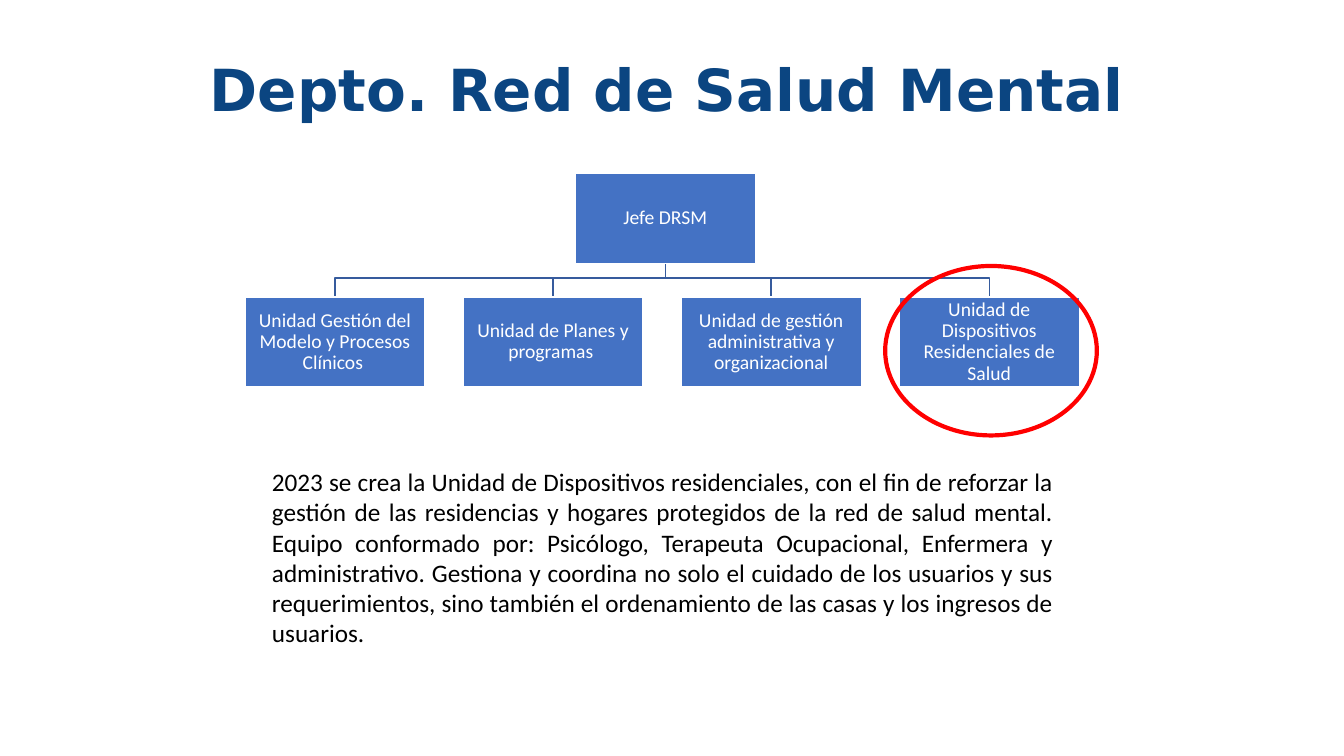
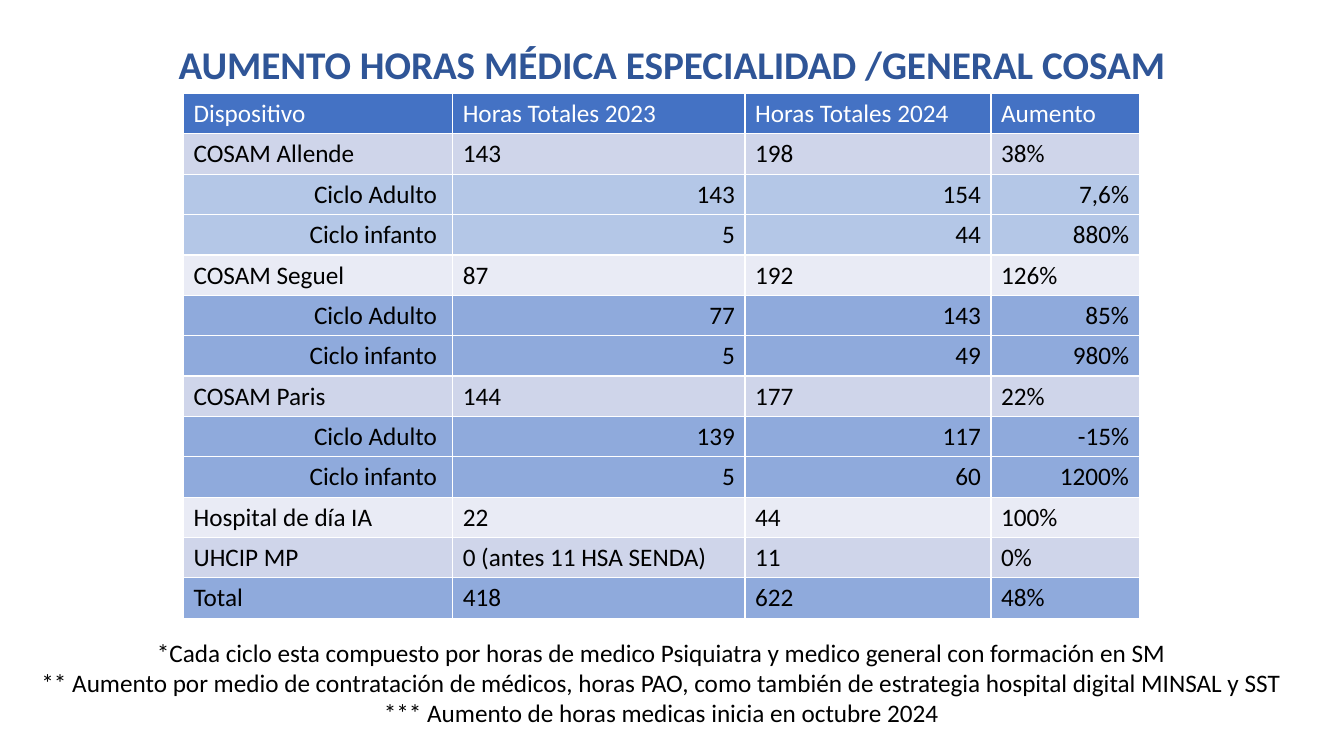
from collections import namedtuple
from dataclasses import dataclass

from lxml import etree
from pptx import Presentation
from pptx.dml.color import RGBColor
from pptx.enum import shapes, text
from pptx.oxml import ns
from pptx.util import Pt

Box = namedtuple("Box", "left top width height")
ALIGN = text.PP_ALIGN
MIDDLE = text.MSO_ANCHOR.MIDDLE


@dataclass(frozen=True)
class Theme:
    """Colours and text styles of the presentation."""

    white: str = "FFFFFF"
    black: str = "000000"
    navy: str = "0B4581"
    heading: str = "2F5597"
    accent: str = "4472C4"
    connector: str = "365B9D"
    alert: str = "FF0000"
    band_dark: str = "CFD5EA"
    band_light: str = "E9EBF5"
    cycle_light: str = "B4C7E7"
    cycle_dark: str = "8FAADC"

    def font(self, role):
        """Return the font values and the colour of a text role."""
        name, size, bold, color = {
            "title": ("DejaVu Sans", 41.4, True, self.navy),
            "heading": ("Calibri", 28, True, self.heading),
            "body": ("Calibri", 18, False, self.black),
            "header": ("Calibri", 18, False, self.white),
            "unit": ("Calibri", 14, False, self.white),
        }[role]
        return {"name": name, "size": Pt(size), "bold": bold}, color


THEME = Theme()

UNITS = [
    "Unidad Gestión del Modelo y Procesos Clínicos ",
    "Unidad de Planes y programas ",
    "Unidad de gestión administrativa y organizacional",
    "Unidad de Dispositivos Residenciales de Salud",
]
SUMMARY = (
    "2023 se crea la Unidad de Dispositivos residenciales, con el fin de reforzar la gestión "
    "de las residencias y hogares protegidos de la red de salud mental. Equipo conformado por: "
    "Psicólogo, Terapeuta Ocupacional, Enfermera y administrativo. Gestiona y coordina no solo "
    "el cuidado de los usuarios y sus requerimientos, sino también el ordenamiento de las casas "
    "y los ingresos de usuarios."
)
COLUMN_WIDTHS = [192.3, 208.8, 175.7, 105.8]
HOURS = [
    (THEME.accent, ["Dispositivo", "Horas Totales 2023", "Horas Totales 2024", "Aumento"]),
    (THEME.band_dark, ["COSAM Allende", "143", "198", "38%"]),
    (THEME.cycle_light, ["Ciclo Adulto ", "143", "154", "7,6%"]),
    (THEME.cycle_light, ["Ciclo infanto ", "5", "44", "880%"]),
    (THEME.band_light, ["COSAM Seguel", "87", "192", "126%"]),
    (THEME.cycle_dark, ["Ciclo Adulto ", "77", "143", "85%"]),
    (THEME.cycle_dark, ["Ciclo infanto ", "5", "49", "980%"]),
    (THEME.band_dark, ["COSAM Paris", "144", "177", "22%"]),
    (THEME.cycle_dark, ["Ciclo Adulto ", "139", "117", "-15%"]),
    (THEME.cycle_dark, ["Ciclo infanto ", "5", "60", "1200%"]),
    (THEME.band_light, ["Hospital de día IA", "22", "44", "100%"]),
    (THEME.band_dark, ["UHCIP MP", "0 (antes 11 HSA SENDA)", "11", "0%"]),
    (THEME.cycle_dark, ["Total", "418", "622", "48%"]),
]
NOTES = [
    "*Cada ciclo esta compuesto por horas de medico Psiquiatra y medico general con formación en SM",
    "** Aumento por medio de contratación de médicos, horas PAO, como también de estrategia "
    "hospital digital MINSAL y SST",
    "*** Aumento de horas medicas inicia en octubre 2024",
]


def apply(target, values):
    """Set every attribute named in a dict of format values."""
    for name, value in values.items():
        setattr(target, name, value)


def lengths(values):
    """Convert numbers in points to lengths."""
    return [Pt(round(value, 2)) for value in values]


def write(frame, lines, role, **layout):
    """Write lines of text in one role, one paragraph each."""
    font, color = THEME.font(role)
    for index, line in enumerate(lines):
        paragraph = frame.add_paragraph() if index else frame.paragraphs[0]
        apply(paragraph, layout)
        run = paragraph.add_run()
        run.text = line
        apply(run.font, font)
        run.font.color.rgb = RGBColor.from_string(color)


def add_text(slide, box, lines, role, anchor=text.MSO_ANCHOR.TOP, **layout):
    """Add a wrapping text box."""
    frame = slide.shapes.add_textbox(*lengths(box)).text_frame
    apply(frame, {"word_wrap": True, "vertical_anchor": anchor})
    write(frame, lines, role, **layout)


def paint(shape, fill, line, weight):
    """Make a shape flat and outlined, hollow when fill is None."""
    shape.shadow.inherit = False
    if fill:
        shape.fill.solid()
        shape.fill.fore_color.rgb = RGBColor.from_string(fill)
    else:
        shape.fill.background()
    shape.line.color.rgb = RGBColor.from_string(line)
    shape.line.width = Pt(weight)


def add_branch(slide, *points):
    """Add an open bent line through the points."""
    start, *rest = [lengths(point) for point in points]
    builder = slide.shapes.build_freeform(*start)
    builder.add_line_segments(rest, close=False)
    paint(builder.convert_to_shape(), None, THEME.connector, 1)


def add_unit(slide, box, label):
    """Add one box of the organisation chart."""
    unit = slide.shapes.add_shape(shapes.MSO_SHAPE.RECTANGLE, *lengths(box))
    paint(unit, THEME.accent, THEME.white, 1)
    margins = {f"margin_{side}": Pt(0.72) for side in ("left", "top", "right", "bottom")}
    apply(unit.text_frame, {"word_wrap": True, "vertical_anchor": MIDDLE, **margins})
    write(unit.text_frame, [label], "unit", alignment=ALIGN.CENTER, line_spacing=0.9)


def organisation_chart(slide, box, head, units):
    """Draw a head over a row of units and circle the last unit."""
    width, height = 128.7, 64.2
    pitch = (box.width - width) / (len(units) - 1)
    row_top = box.top + box.height - height
    head_box = Box(box.left + (box.width - width) / 2 + 2.2, box.top, width, height)
    row = [Box(box.left + index * pitch, row_top, width, height) for index in range(len(units))]
    trunk = head_box.left + width / 2
    head_bottom = box.top + height
    bus = head_bottom + 10.4

    for unit in reversed(row):
        center = unit.left + width / 2
        add_branch(slide, (trunk, head_bottom), (trunk, bus), (center, bus), (center, row_top))
    add_unit(slide, head_box, head)
    for unit, label in zip(row, units):
        add_unit(slide, unit, label)
    ring_box = Box(row[-1].left - 10, row_top - 22.2, 151.2, 121)
    ring = slide.shapes.add_shape(shapes.MSO_SHAPE.OVAL, *lengths(ring_box))
    paint(ring, None, THEME.alert, 3)


def add_borders(cell):
    """Give a cell white borders on all sides."""
    properties = cell._tc.get_or_add_tcPr()
    for side in "LRTB":
        border = etree.SubElement(properties, ns.qn(f"a:ln{side}"), w=str(Pt(1)))
        fill = etree.SubElement(border, ns.qn("a:solidFill"))
        etree.SubElement(fill, ns.qn("a:srgbClr"), val=THEME.white)


def hours_table(slide, box, rows, widths):
    """Draw the table of hours with cycle rows aligned right."""
    table = slide.shapes.add_table(len(rows), len(widths), *lengths(box)).table
    apply(table, {"first_row": False, "horz_banding": False})
    for column, width in zip(table.columns, widths):
        column.width = Pt(width)
    for index, (fill, values) in enumerate(rows):
        table.rows[index].height = Pt(box.height / len(rows))
        alignment = ALIGN.RIGHT if values[0].startswith("Ciclo") else ALIGN.LEFT
        for cell, value in zip(table.rows[index].cells, values):
            add_borders(cell)
            cell.fill.solid()
            cell.fill.fore_color.rgb = RGBColor.from_string(fill)
            role = "body" if index else "header"
            write(cell.text_frame, [value], role, alignment=alignment)


def department_slide(slide):
    """Build the slide on the department and its units."""
    add_text(slide, Box(55, 42.5, 856.8, 46.8), ["Depto. Red de Salud Mental "], "title",
             MIDDLE, alignment=ALIGN.CENTER, line_spacing=0.9)
    organisation_chart(slide, Box(175, 124, 596, 152.4), "Jefe DRSM", UNITS)
    add_text(slide, Box(187.2, 329.6, 572.2, 138.2), [SUMMARY], "body", alignment=ALIGN.JUSTIFY)


def hours_slide(slide):
    """Build the slide on the increase in medical hours."""
    add_text(slide, Box(95, 25.2, 769.7, 41), ["AUMENTO HORAS MÉDICA ESPECIALIDAD /GENERAL COSAM"],
             "heading", alignment=ALIGN.CENTER)
    hours_table(slide, Box(131.1, 66.8, sum(COLUMN_WIDTHS), 374.4), HOURS, COLUMN_WIDTHS)
    add_text(slide, Box(18, 451.4, 908.6, 72.7), NOTES, "body", alignment=ALIGN.CENTER)


def main():
    """Build and save the presentation."""
    presentation = Presentation()
    apply(presentation, {"slide_width": Pt(960), "slide_height": Pt(540)})
    for build in (department_slide, hours_slide):
        build(presentation.slides.add_slide(presentation.slide_layouts[6]))
    presentation.save("out.pptx")


if __name__ == "__main__":
    main()
